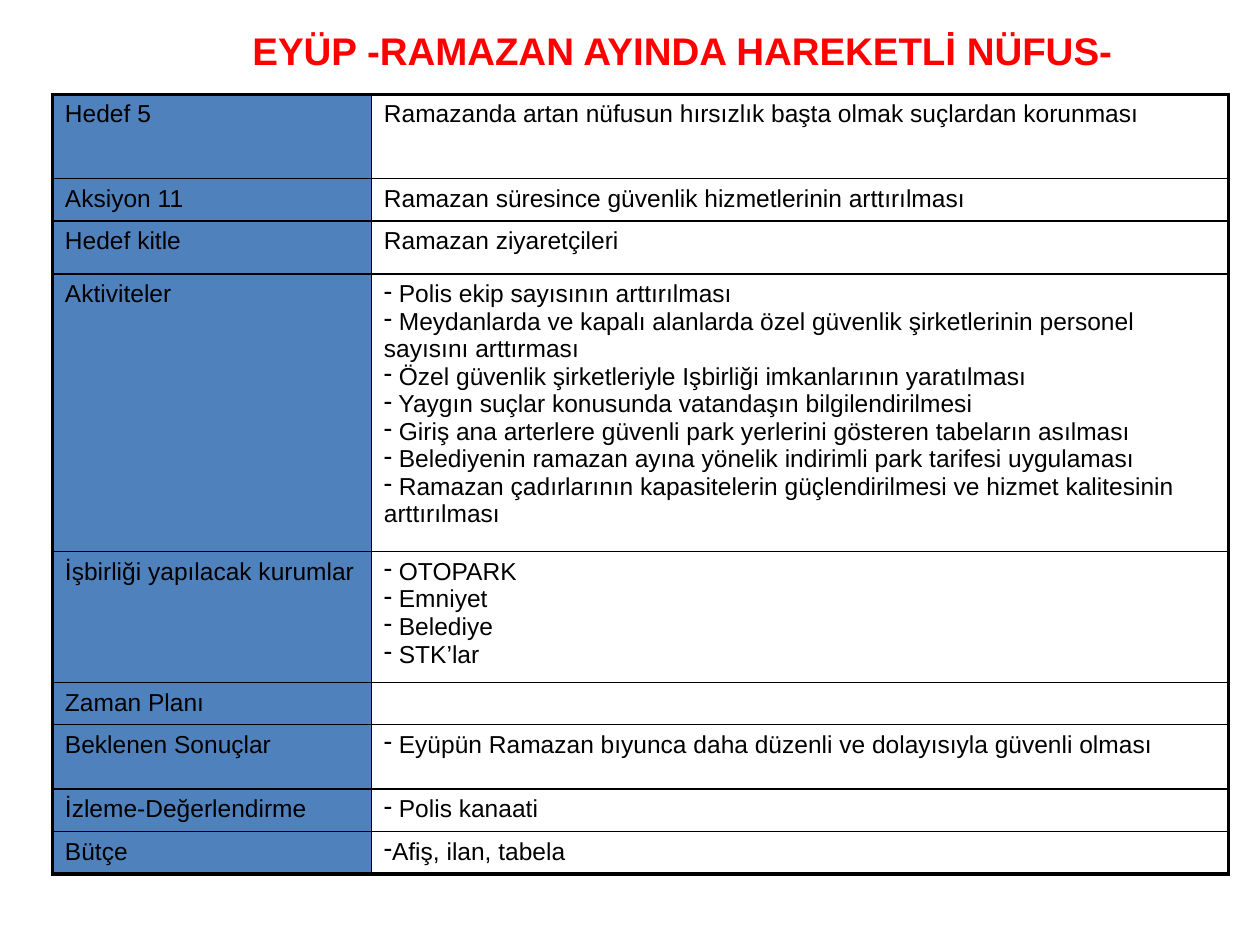
from dataclasses import dataclass

from lxml import etree
from pptx import Presentation
from pptx import util as u
from pptx.dml.color import RGBColor
from pptx.enum import text
from pptx.oxml import ns

COLORS = {"title": "FF0000", "label": "4F81BD", "ink": "000000"}
FONT = "Arial"
BODY_SIZE = 14
OUTER, INNER = 2.25, 1
MARGINS = {
    "margin_left": u.Cm(0.25),
    "margin_right": u.Cm(0.25),
    "margin_top": u.Cm(0.13),
    "margin_bottom": u.Cm(0.13),
}
TITLE_FORMAT = {"name": FONT, "size": u.Pt(22), "bold": True}
BODY_FORMAT = {"name": FONT, "size": u.Pt(BODY_SIZE), "bold": False}


@dataclass
class PlanRow:
    label: str
    height: float
    entries: tuple[str, ...] = ()
    dashed: bool = True


PLAN = [
    PlanRow("Hedef 5", 1.7,
            ("Ramazanda artan nüfusun hırsızlık başta olmak suçlardan korunması",), False),
    PlanRow("Aksiyon 11", 0.84,
            ("Ramazan süresince güvenlik hizmetlerinin arttırılması",), False),
    PlanRow("Hedef kitle", 1.07, ("Ramazan ziyaretçileri",), False),
    PlanRow("Aktiviteler", 5.59, (
        " Polis ekip sayısının arttırılması",
        " Meydanlarda ve kapalı alanlarda özel güvenlik şirketlerinin personel sayısını arttırması",
        " Özel güvenlik şirketleriyle Işbirliği imkanlarının yaratılması",
        " Yaygın suçlar konusunda vatandaşın bilgilendirilmesi",
        " Giriş ana arterlere güvenli park yerlerini gösteren tabeların asılması",
        " Belediyenin ramazan ayına yönelik indirimli park tarifesi uygulaması",
        " Ramazan çadırlarının kapasitelerin güçlendirilmesi ve hizmet kalitesinin arttırılması",
    )),
    PlanRow("İşbirliği yapılacak kurumlar", 2.62,
            (" OTOPARK", " Emniyet", " Belediye", " STK’lar")),
    PlanRow("Zaman Planı", 0.84),
    PlanRow("Beklenen Sonuçlar", 1.3,
            (" Eyüpün Ramazan bıyunca daha düzenli ve dolayısıyla güvenli olması",)),
    PlanRow("İzleme-Değerlendirme", 0.84, (" Polis kanaati",)),
    PlanRow("Bütçe", 0.84, ("Afiş, ilan, tabela",)),
]
COLUMN_WIDTHS = (6.43, 17.27)


def apply(target, values: dict) -> None:
    for key, value in values.items():
        setattr(target, key, value)


def write(paragraph, content: str, style: dict, color: str) -> None:
    run = paragraph.add_run()
    run.text = content
    apply(run.font, style)
    run.font.color.rgb = RGBColor.from_string(COLORS[color])


def add_dash(paragraph) -> None:
    properties = paragraph._p.get_or_add_pPr()
    etree.SubElement(properties, ns.qn("a:buChar"), char="-")


def set_borders(cell, widths: dict[str, float]) -> None:
    properties = cell._tc.get_or_add_tcPr()
    for side, width in widths.items():
        line = etree.SubElement(properties, ns.qn(f"a:ln{side}"), w=str(u.Pt(width)))
        fill = etree.SubElement(line, ns.qn("a:solidFill"))
        etree.SubElement(fill, ns.qn("a:srgbClr"), val=COLORS["ink"])


def fill_cell(cell, entries: tuple[str, ...], dashed: bool) -> None:
    apply(cell, MARGINS)
    frame = cell.text_frame
    for number, entry in enumerate(entries):
        paragraph = frame.add_paragraph() if number else frame.paragraphs[0]
        if dashed:
            add_dash(paragraph)
        write(paragraph, entry, BODY_FORMAT, "ink")
    if not entries:
        etree.SubElement(frame.paragraphs[0]._p, ns.qn("a:endParaRPr"),
                         sz=str(BODY_SIZE * 100))


def add_title(slide) -> None:
    title = slide.shapes.add_textbox(u.Cm(3.61), u.Cm(0.43), u.Cm(20.29), u.Cm(1.19))
    frame = title.text_frame
    apply(frame, {"word_wrap": True, "auto_size": text.MSO_AUTO_SIZE.SHAPE_TO_FIT_TEXT})
    heading = frame.paragraphs[0]
    heading.alignment = text.PP_ALIGN.CENTER
    write(heading, "EYÜP -RAMAZAN AYINDA HAREKETLİ NÜFUS-", TITLE_FORMAT, "title")


def add_plan(slide, rows: list[PlanRow]) -> None:
    plan = slide.shapes.add_table(
        len(rows), len(COLUMN_WIDTHS), u.Cm(1.06), u.Cm(1.9),
        u.Cm(sum(COLUMN_WIDTHS)), u.Cm(sum(row.height for row in rows)),
    ).table
    apply(plan, {"first_row": False, "horz_banding": False})
    for column, width in zip(plan.columns, COLUMN_WIDTHS):
        column.width = u.Cm(width)
    last = len(rows) - 1
    for index, row in enumerate(rows):
        plan.rows[index].height = u.Cm(row.height)
        label, detail = plan.rows[index].cells
        fill_cell(label, (row.label,), False)
        fill_cell(detail, row.entries, row.dashed)
        top = OUTER if index == 0 else INNER
        bottom = OUTER if index == last else INNER
        set_borders(label, {"L": OUTER, "R": INNER, "T": top, "B": bottom})
        set_borders(detail, {"L": INNER, "R": OUTER, "T": top, "B": bottom})
        label.fill.solid()
        label.fill.fore_color.rgb = RGBColor.from_string(COLORS["label"])
        detail.fill.background()


def main() -> None:
    deck = Presentation()
    apply(deck, {"slide_width": u.Cm(25.4), "slide_height": u.Cm(19.05)})
    slide = deck.slides.add_slide(deck.slide_layouts[6])
    add_title(slide)
    add_plan(slide, PLAN)
    deck.save("out.pptx")


if __name__ == "__main__":
    main()
